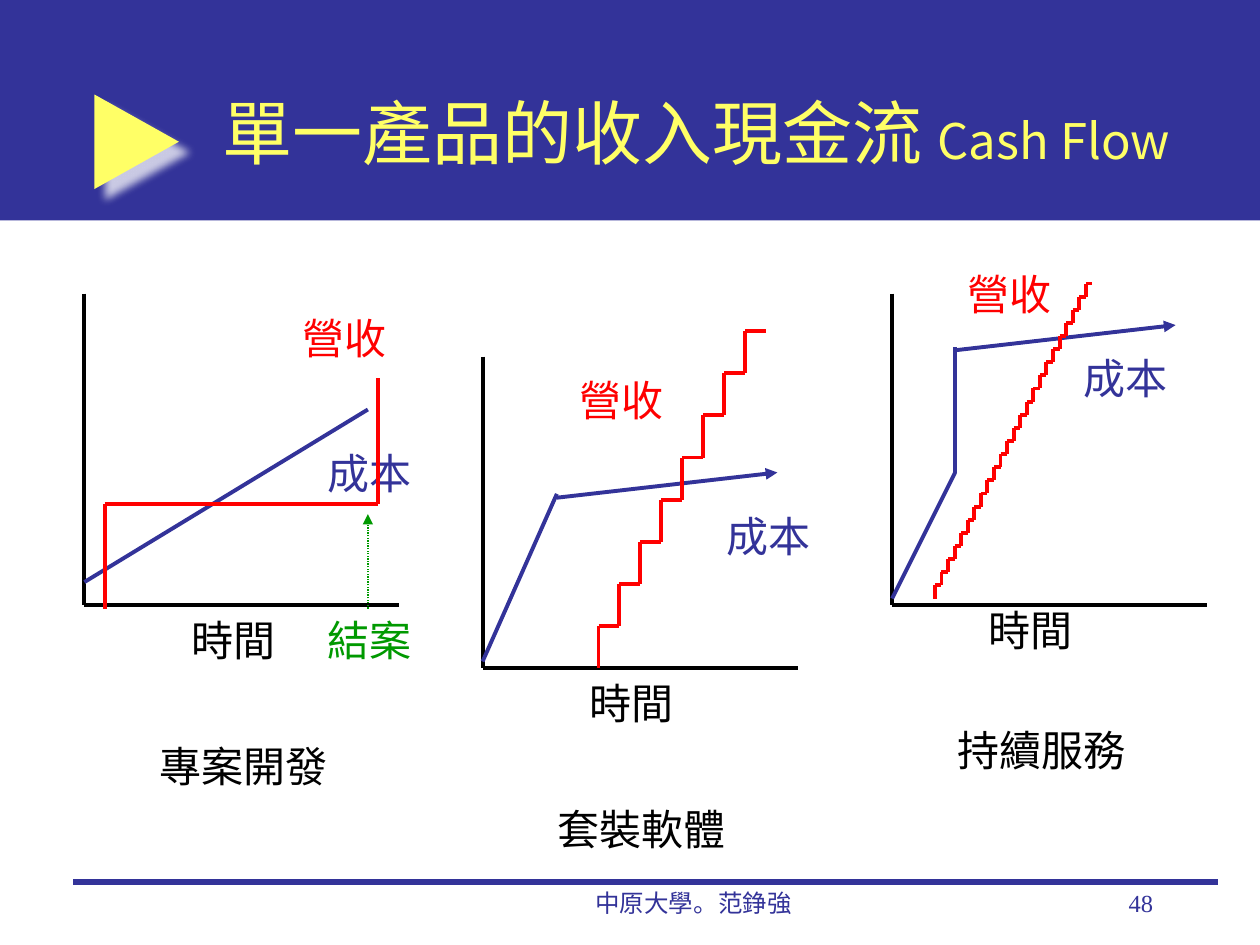
from itertools import pairwise

from lxml import etree
from pptx import Presentation
from pptx.dml.color import RGBColor
from pptx.enum.dml import MSO_LINE
from pptx.enum.shapes import MSO_CONNECTOR, MSO_SHAPE
from pptx.enum.text import MSO_ANCHOR, MSO_AUTO_SIZE, PP_ALIGN
from pptx.oxml import parse_xml
from pptx.oxml.ns import nsdecls, qn
from pptx.util import Inches, Pt

NAVY = RGBColor(0x33, 0x33, 0x99)
YELLOW = RGBColor(0xFF, 0xFF, 0x66)
RED = RGBColor(0xFF, 0, 0)
GREEN = RGBColor(0, 0x99, 0)
BLACK = RGBColor(0, 0, 0)
SERIF, SANS = "Times New Roman", "Noto Sans CJK SC"

TITLE = [("單一產品的收入現金流 ", 40), ("Cash Flow", 28)]
# text, left, width, alignment
FOOTERS = [("中原大學。范錚強", 3.92, 3.17, PP_ALIGN.CENTER),
           ("48", 7.17, 2.08, PP_ALIGN.RIGHT)]
AXIS_WIDTH, AXIS_HEIGHT = 2.5, 2.47


def staircase(start, end, steps):
    """Corner points of equal steps, each going up and then right."""
    (x, y), (right, top) = start, end
    dx, dy = (right - x) / steps, (top - y) / steps
    points = [start]
    for i in range(steps):
        points += [(x + i * dx, y + (i + 1) * dy),
                   (x + (i + 1) * dx, y + (i + 1) * dy)]
    return points


# labels: text, left, top, colour; paths: points, colour; arrows: from, to
MODELS = [
    {"origin": (0.67, 4.8),
     "labels": [("成本", 2.5, 3.5, NAVY), ("營收", 2.3, 2.43, RED),
                ("專案開發", 1.17, 5.83, BLACK), ("時間", 1.42, 4.83, BLACK),
                ("結案", 2.5, 4.83, GREEN)],
     "paths": [([(0.67, 4.62), (2.92, 3.25)], NAVY),
               ([(0.83, 4.83), (0.83, 4), (3, 4), (3, 3)], RED)],
     "closing": ((2.92, 4.83), (2.92, 4.08))},
    {"origin": (3.83, 5.3),
     "labels": [("成本", 5.67, 4, NAVY), ("營收", 4.5, 2.92, RED),
                ("套裝軟體", 4.33, 6.33, BLACK), ("時間", 4.58, 5.33, BLACK)],
     "paths": [([(3.83, 5.25), (4.42, 3.92)], NAVY),
               (staircase((4.75, 5.3), (6.08, 2.63), 8), RED)],
     "cost_trend": ((4.42, 3.95), (6.17, 3.75))},
    {"origin": (7.08, 4.8),
     "labels": [("成本", 8.5, 2.75, NAVY), ("營收", 7.58, 2.08, RED),
                ("持續服務", 7.5, 5.7, BLACK), ("時間", 7.75, 4.75, BLACK)],
     "paths": [([(7.08, 4.75), (7.58, 3.75), (7.58, 2.75)], NAVY),
               (staircase((7.42, 4.75), (8.67, 2.25), 24), RED)],
     "cost_trend": ((7.58, 2.78), (9.33, 2.58))},
]


def add_line(shapes, start, end, color, width=2.25, arrow=False, dash=None):
    line = shapes.add_connector(MSO_CONNECTOR.STRAIGHT,
                                *(Inches(v) for v in (*start, *end)))
    line.line.color.rgb = color
    line.line.width = Pt(width)
    if dash:
        line.line.dash_style = dash
    if arrow:
        etree.SubElement(line.line._get_or_add_ln(), qn("a:tailEnd"),
                         type="triangle")
    etree.SubElement(line._element.spPr, qn("a:effectLst"))


def add_path(shapes, points, color):
    for start, end in pairwise(points):
        add_line(shapes, start, end, color)


def add_text(shapes, text, left, top, width, height, size, color,
             align=PP_ALIGN.LEFT, wrap=True):
    box = shapes.add_textbox(*(Inches(v) for v in (left, top, width, height)))
    frame = box.text_frame
    frame.word_wrap = wrap
    if not wrap:
        frame.auto_size = MSO_AUTO_SIZE.SHAPE_TO_FIT_TEXT
    paragraph = frame.paragraphs[0]
    paragraph.text = text
    paragraph.alignment = align
    font = paragraph.font
    font.name, font.size, font.color.rgb = SERIF, Pt(size), color


def add_filled(shapes, preset, left, top, width, height, color):
    shape = shapes.add_shape(
        preset, *(Inches(v) for v in (left, top, width, height)))
    shape.fill.solid()
    shape.fill.fore_color.rgb = color
    shape.line.fill.background()
    shape.shadow.inherit = False
    return shape


def add_header(shapes):
    add_filled(shapes, MSO_SHAPE.RECTANGLE, 0, 0, 10, 1.75, NAVY)
    marker = add_filled(shapes, MSO_SHAPE.RIGHT_ARROW,
                        0.75, 0.75, 0.67, 0.75, YELLOW)
    marker.adjustments[0], marker.adjustments[1] = 0.38, 1
    marker._element.spPr.find(qn("a:effectLst")).append(parse_xml(
        f'<a:outerShdw {nsdecls("a")} blurRad="{Pt(5)}" dist="{Pt(8.5)}" '
        'dir="2700000" algn="ctr" rotWithShape="0"><a:srgbClr val="FFFFFF">'
        '<a:alpha val="75000"/></a:srgbClr></a:outerShdw>'))

    title = shapes.add_textbox(Inches(1.67), Inches(0.42),
                               Inches(7.9), Inches(1.25)).text_frame
    title.word_wrap = True
    title.vertical_anchor = MSO_ANCHOR.MIDDLE
    paragraph = title.paragraphs[0]
    paragraph.font.name = SANS
    paragraph.font.color.rgb = YELLOW
    for text, size in TITLE:
        run = paragraph.add_run()
        run.text = text
        run.font.size = Pt(size)


def add_model(shapes, model):
    x, y = model["origin"]
    add_path(shapes, [(x, y - AXIS_HEIGHT), (x, y), (x + AXIS_WIDTH, y)], BLACK)
    for text, left, top, color in model["labels"]:
        width = 0.2 + len(text) / 3
        add_text(shapes, text, left, top, width, 0.5, 24, color, wrap=False)
    if "cost_trend" in model:
        add_line(shapes, *model["cost_trend"], NAVY, arrow=True)
    for points, color in model["paths"]:
        add_path(shapes, points, color)
    if "closing" in model:
        add_line(shapes, *model["closing"], GREEN, 0.75, True,
                 MSO_LINE.ROUND_DOT)


def main():
    deck = Presentation()
    deck.slide_width, deck.slide_height = Inches(10), Inches(7.5)
    shapes = deck.slides.add_slide(deck.slide_layouts[6]).shapes
    add_header(shapes)
    add_line(shapes, (0.58, 7), (9.67, 7), NAVY, 3)
    for text, left, width, align in FOOTERS:
        add_text(shapes, text, left, 7, width, 0.5, 14, NAVY, align)
    for model in MODELS:
        add_model(shapes.add_group_shape().shapes, model)
    deck.save("out.pptx")


if __name__ == "__main__":
    main()
